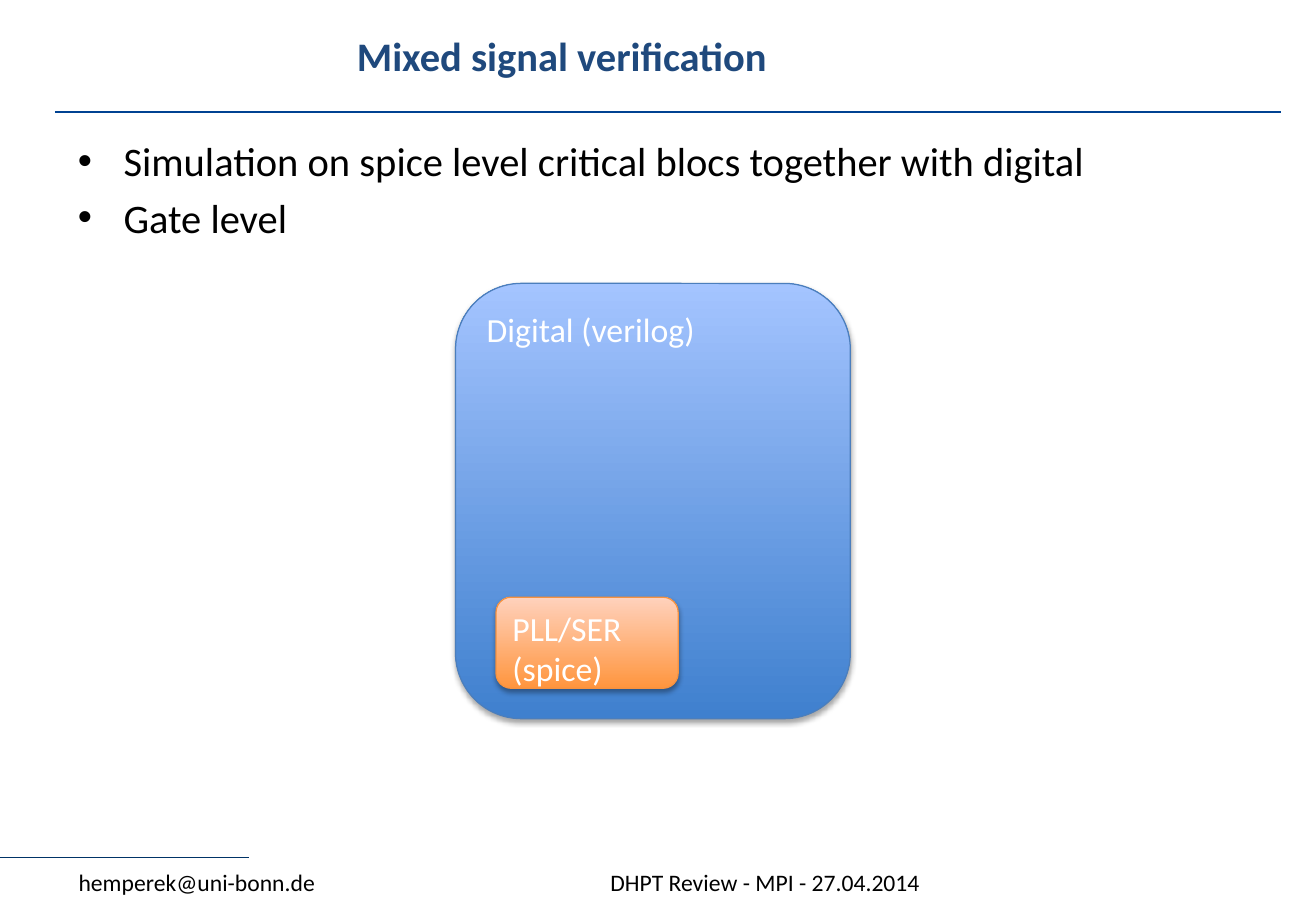
from lxml import etree
from pptx import Presentation
from pptx.dml.color import RGBColor
from pptx.enum.shapes import MSO_CONNECTOR, MSO_SHAPE
from pptx.enum.text import MSO_ANCHOR, MSO_AUTO_SIZE, PP_ALIGN
from pptx.oxml.ns import qn
from pptx.util import Pt

LEFT, CENTER = PP_ALIGN.LEFT, PP_ALIGN.CENTER
TOP, MIDDLE = MSO_ANCHOR.TOP, MSO_ANCHOR.MIDDLE
FIXED = MSO_AUTO_SIZE.NONE
ROUND, STRAIGHT = MSO_SHAPE.ROUNDED_RECTANGLE, MSO_CONNECTOR.STRAIGHT

FONT = "Calibri"
BLACK = RGBColor(0x00, 0x00, 0x00)
WHITE = RGBColor(0xFF, 0xFF, 0xFF)
NAVY = RGBColor(0x1F, 0x49, 0x7D)
RULE = RGBColor(0x00, 0x42, 0x92)
FOOT = RGBColor(0x00, 0x33, 0x66)
BLUE = RGBColor(0x3F, 0x80, 0xCE)
SKY = RGBColor(0xA4, 0xC4, 0xFF)
BLUE_EDGE = RGBColor(0x4B, 0x7E, 0xBC)
ORANGE = RGBColor(0xFF, 0x95, 0x3E)
PEACH = RGBColor(0xFF, 0xD2, 0xBD)
ORANGE_EDGE = RGBColor(0xF6, 0x92, 0x40)


def place(shape, box):
    shape.left, shape.top, shape.width, shape.height = map(Pt, box)


def write(shape, lines, size, color, align=LEFT, anchor=TOP, bold=False):
    """Fill the shape with one paragraph per line and return the paragraphs."""
    frame = shape.text_frame
    frame.word_wrap = True
    frame.auto_size = FIXED
    frame.vertical_anchor = anchor
    for i, line in enumerate(lines):
        para = frame.add_paragraph() if i else frame.paragraphs[0]
        para.alignment = align
        run = para.add_run()
        run.text = line
        font = run.font
        font.name, font.size, font.bold = FONT, Pt(size), bold
        font.color.rgb = color
    return frame.paragraphs


def add_rule(slide, x, y, width, color, weight):
    line = slide.shapes.add_connector(STRAIGHT, Pt(x), Pt(y), Pt(x + width), Pt(y))
    line.line.color.rgb = color
    line.line.width = Pt(weight)
    etree.SubElement(line._element.spPr, qn("a:effectLst"))


def add_title(slide, box, text):
    title = slide.shapes.title
    place(title, box)
    write(title, [text], 24, NAVY, CENTER, bold=True)


def add_list(slide, box, items):
    body = slide.placeholders[1]
    place(body, box)
    for i, para in enumerate(write(body, items, 24, BLACK)):
        props = para._p.get_or_add_pPr()
        props.set("marL", str(Pt(27)))
        props.set("indent", str(-Pt(27)))
        para.space_before = Pt(4.8 if i else 0)


def add_shadow(shape):
    shape.shadow.inherit = False
    effects = shape._element.spPr.find(qn("a:effectLst"))
    outer = etree.SubElement(effects, qn("a:outerShdw"), blurRad=str(Pt(3.1)),
                             dist=str(Pt(1.8)), dir="5400000", rotWithShape="0")
    color = etree.SubElement(outer, qn("a:srgbClr"), val=str(BLACK))
    etree.SubElement(color, qn("a:alpha"), val="35000")


def add_block(slide, box, lines, low, high, edge):
    """Rounded block shaded from low at the bottom to high at the top."""
    block = slide.shapes.add_shape(ROUND, *map(Pt, box))
    block.fill.gradient()
    block.fill.gradient_angle = 90
    for stop, color in zip(block.fill.gradient_stops, (low, high)):
        stop.color.rgb = color
    block.line.color.rgb = edge
    block.line.width = Pt(0.75)
    add_shadow(block)
    write(block, lines, 20, WHITE)


def add_chip(slide, box):
    x, y, width, height = box
    add_block(slide, box, ["Digital (verilog)"], BLUE, SKY, BLUE_EDGE)
    inner = (x + 24, y + height - 72, 108, 54)
    add_block(slide, inner, ["PLL/SER", "(spice)"], ORANGE, PEACH, ORANGE_EDGE)


def add_footer(slide, box):
    x, y, width, height = box
    add_rule(slide, 0, y, 147.6, FOOT, 0.75)
    mail = slide.shapes.add_textbox(Pt(x), Pt(y), Pt(220), Pt(height))
    write(mail, ["hemperek@uni-bonn.de"], 14, BLACK, anchor=MIDDLE)
    event = slide.shapes.add_textbox(Pt(x + 227.5), Pt(y), Pt(width - 227.5), Pt(height))
    write(event, ["DHPT Review - MPI - 27.04.2014"], 14, BLACK, CENTER, MIDDLE)


def main():
    deck = Presentation()
    deck.slide_width, deck.slide_height = Pt(780), Pt(540)
    slide = deck.slides.add_slide(deck.slide_layouts[1])
    add_rule(slide, 32.5, 66.5, 726.5, RULE, 1.5)
    add_title(slide, (38, 15, 590, 45), "Mixed signal verification")
    add_list(slide, (39, 77, 713.5, 420), [
        "Simulation on spice level critical blocs together with digital",
        "Gate level",
    ])
    add_footer(slide, (39.5, 508.5, 600.5, 29))
    add_chip(slide, (270, 168, 234, 258))
    deck.save("out.pptx")


if __name__ == "__main__":
    main()
